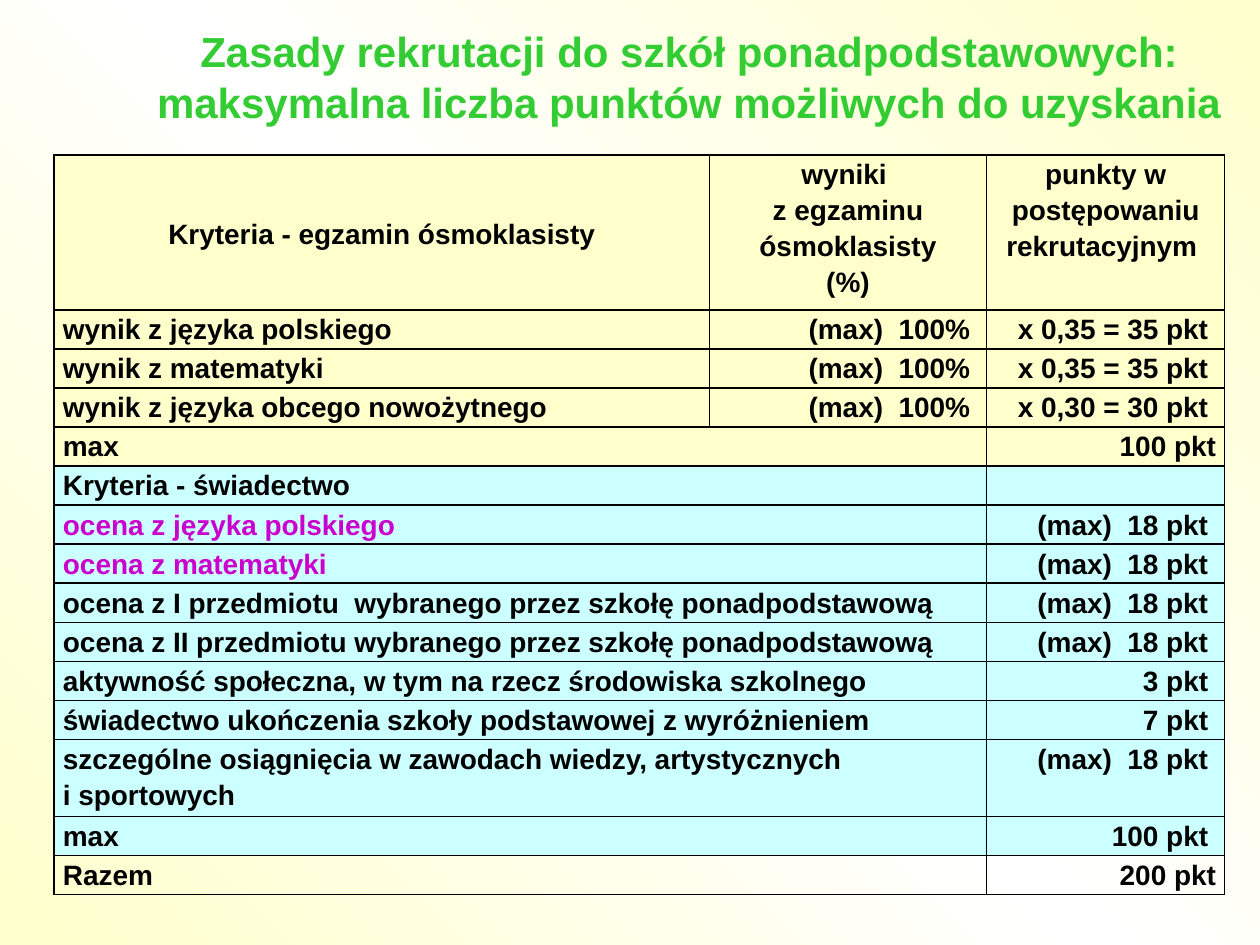
"""Build a slide with the maximum recruitment points for secondary schools."""
import copy
from dataclasses import dataclass

import lxml.etree
import pptx
import pptx.dml.color
import pptx.enum.text
import pptx.oxml.ns
import pptx.util

Inches = pptx.util.Inches
Align = pptx.enum.text.PP_ALIGN
Anchor = pptx.enum.text.MSO_ANCHOR


@dataclass(frozen=True)
class Theme:
    font: str = "Arial"
    title_size: int = 24
    table_size: int = 16
    title: str = "33CC33"
    text: str = "000000"
    accent: str = "CC00CC"
    exam: str = "FFFFCC"
    certificate: str = "CCFFFF"
    background: tuple = ("FFFFCB", "FFFFFF", "FFFFCB")


THEME = Theme()
TITLE = "Zasady rekrutacji do szkół ponadpodstawowych: maksymalna liczba punktów możliwych do uzyskania"
HEADER = (
    "Kryteria - egzamin ósmoklasisty",
    "wyniki \vz egzaminu ósmoklasisty\n(%)",
    "punkty w postępowaniu rekrutacyjnym ",
)
EXAM_ROWS = [
    ("wynik z języka polskiego", "(max)  100% ", "x 0,35 = 35 pkt "),
    ("wynik z matematyki", "(max)  100% ", "x 0,35 = 35 pkt "),
    ("wynik z języka obcego nowożytnego", "(max)  100% ", "x 0,30 = 30 pkt "),
    ("max", None, "100 pkt"),
]
CERTIFICATE_ROWS = [
    ("Kryteria - świadectwo", None, ""),
    ("ocena z języka polskiego", None, "(max)  18 pkt "),
    ("ocena z matematyki", None, "(max)  18 pkt "),
    ("ocena z I przedmiotu  wybranego przez szkołę ponadpodstawową", None, "(max)  18 pkt "),
    ("ocena z II przedmiotu wybranego przez szkołę ponadpodstawową", None, "(max)  18 pkt "),
    ("aktywność społeczna, w tym na rzecz środowiska szkolnego", None, "3 pkt "),
    ("świadectwo ukończenia szkoły podstawowej z wyróżnieniem", None, "7 pkt "),
    ("szczególne osiągnięcia w zawodach wiedzy, artystycznych\vi sportowych", None, "(max)  18 pkt "),
    ("max", None, "100 pkt "),
]
TOTAL_ROW = ("Razem", None, "200 pkt")
ACCENT_LABELS = {"ocena z języka polskiego", "ocena z matematyki"}
COLUMN_WIDTHS = (5.2, 2.2, 1.89)
ROW_HEIGHT = 0.31
TALL_ROWS = {0: 1.23, 12: 0.61}


def rgb(value):
    """Turn a hex string into a colour."""
    return pptx.dml.color.RGBColor.from_string(value)


def set_background(slide):
    """Fill the slide with a diagonal three-stop gradient."""
    fill = slide.background.fill
    fill.gradient()
    fill.gradient_angle = 45
    stop_list = slide.element.find(".//" + pptx.oxml.ns.qn("a:gsLst"))
    stop_list.insert(1, copy.deepcopy(stop_list[0]))
    for index, (stop, color) in enumerate(zip(fill.gradient_stops, THEME.background)):
        stop.color.rgb = rgb(color)
        stop.position = index / 2


def format_text(text_frame, size, color, alignment, line_spacing=None):
    """Style every paragraph and run of a text frame."""
    for paragraph in text_frame.paragraphs:
        paragraph.alignment = alignment
        paragraph.line_spacing = line_spacing
        for run in paragraph.runs:
            run.font.name = THEME.font
            run.font.size = pptx.util.Pt(size)
            run.font.bold = True
            run.font.color.rgb = rgb(color)


def add_title(slide):
    """Add the centred slide title."""
    shape = slide.shapes.add_textbox(Inches(1.14), Inches(0.13), Inches(8.66), Inches(0.95))
    text_frame = shape.text_frame
    text_frame.word_wrap = True
    text_frame.vertical_anchor = Anchor.MIDDLE
    text_frame.margin_left = text_frame.margin_right = Inches(0.05)
    text_frame.text = TITLE
    format_text(text_frame, THEME.title_size, THEME.title, Align.CENTER)


def add_borders(cell):
    """Draw a thin line on all four sides of a cell."""
    properties = cell._tc.get_or_add_tcPr()
    for side in ("lnL", "lnR", "lnT", "lnB"):
        line = lxml.etree.SubElement(properties, pptx.oxml.ns.qn(f"a:{side}"), w=str(pptx.util.Pt(1)))
        fill = lxml.etree.SubElement(line, pptx.oxml.ns.qn("a:solidFill"))
        lxml.etree.SubElement(fill, pptx.oxml.ns.qn("a:srgbClr"), val=THEME.text)


def fill_cell(cell, text, fill_color, alignment):
    """Set the borders, fill and text of one cell."""
    add_borders(cell)
    if fill_color:
        cell.fill.solid()
        cell.fill.fore_color.rgb = rgb(fill_color)
    else:
        cell.fill.background()
    cell.margin_left = cell.margin_right = Inches(0.07)
    cell.margin_top = cell.margin_bottom = 0
    if text:
        cell.text_frame.text = text
        color = THEME.accent if text in ACCENT_LABELS else THEME.text
        format_text(cell.text_frame, THEME.table_size, color, alignment, 1.15)


def add_points_table(slide):
    """Add the table of criteria and points."""
    rows = [(row, THEME.exam) for row in [HEADER] + EXAM_ROWS]
    rows += [(row, THEME.certificate) for row in CERTIFICATE_ROWS]
    rows.append((TOTAL_ROW, None))
    heights = [TALL_ROWS.get(index, ROW_HEIGHT) for index in range(len(rows))]
    table = slide.shapes.add_table(
        len(rows), len(COLUMN_WIDTHS), Inches(0.43), Inches(1.23),
        Inches(sum(COLUMN_WIDTHS)), Inches(sum(heights)),
    ).table
    table.first_row = table.horz_banding = False
    for column, width in zip(table.columns, COLUMN_WIDTHS):
        column.width = Inches(width)
    for row_index, (values, fill_color) in enumerate(rows):
        table.rows[row_index].height = Inches(heights[row_index])
        for column_index, text in enumerate(values):
            alignment = Align.RIGHT if column_index else Align.LEFT
            if values is HEADER:
                alignment = Align.CENTER
            fill_cell(table.cell(row_index, column_index), text, fill_color, alignment)
        if values[1] is None:
            table.cell(row_index, 0).merge(table.cell(row_index, 1))
    table.cell(0, 0).vertical_anchor = Anchor.MIDDLE


def main():
    """Build and save the presentation."""
    presentation = pptx.Presentation()
    presentation.slide_width = Inches(10)
    presentation.slide_height = Inches(7.5)
    slide = presentation.slides.add_slide(presentation.slide_layouts[6])
    set_background(slide)
    add_title(slide)
    add_points_table(slide)
    presentation.save("out.pptx")


if __name__ == "__main__":
    main()
